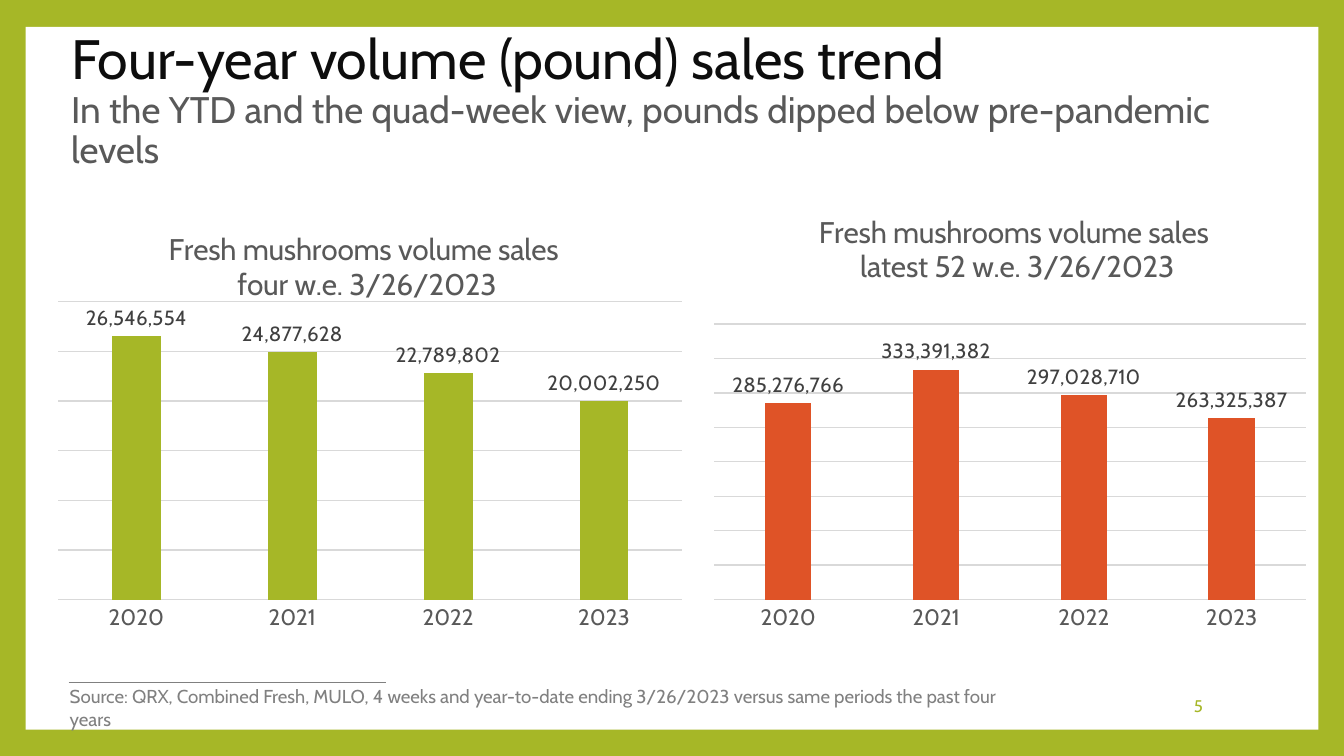
from lxml.etree import SubElement
from pptx import Presentation
from pptx.chart.data import CategoryChartData
from pptx.dml.color import RGBColor
from pptx.enum.chart import XL_CHART_TYPE, XL_LABEL_POSITION, XL_TICK_MARK
from pptx.enum.shapes import MSO_CONNECTOR, MSO_SHAPE
from pptx.enum.text import MSO_ANCHOR, PP_ALIGN
from pptx.oxml import parse_xml
from pptx.oxml.ns import nsdecls, qn
from pptx.util import Inches, Pt

GREEN = RGBColor(0xA6, 0xB7, 0x27)
ORANGE = RGBColor(0xDF, 0x53, 0x27)
WHITE = RGBColor(0xFF, 0xFF, 0xFF)
BLACK = RGBColor(0, 0, 0)
INK = RGBColor(0x0D, 0x0D, 0x0D)
LABEL = RGBColor(0x40, 0x40, 0x40)
TEXT = RGBColor(0x59, 0x59, 0x59)
GRAY = RGBColor(0x80, 0x80, 0x80)
GRID = RGBColor(0xD9, 0xD9, 0xD9)
FONT = "Cabin"
YEARS = ["2020", "2021", "2022", "2023"]


def style_font(font, size, color):
    values = {"name": FONT, "size": Pt(size), "bold": False}
    for name, value in values.items():
        setattr(font, name, value)
    font.color.rgb = color


def style_line(line, color, width):
    line.color.rgb = color
    line.width = Pt(width)


def add_text(slide, box, lines, anchor=MSO_ANCHOR.TOP, align=PP_ALIGN.LEFT, spacing=1.0):
    """Add one paragraph of (text, size, color) lines parted by line breaks."""
    tf = slide.shapes.add_textbox(*map(Inches, box)).text_frame
    tf.word_wrap = True
    tf.vertical_anchor = anchor
    p = tf.paragraphs[0]
    p.alignment = align
    p.line_spacing = spacing
    for i, (text, size, color) in enumerate(lines):
        if i:
            p.add_line_break()
        r = p.add_run()
        r.text = text
        style_font(r.font, size, color)


def add_panel(slide, box):
    slide.background.fill.solid()
    slide.background.fill.fore_color.rgb = GREEN
    sp = slide.shapes.add_shape(MSO_SHAPE.RECTANGLE, *map(Inches, box))
    sp.shadow.inherit = False
    sp.fill.solid()
    sp.fill.fore_color.rgb = WHITE
    sp.line.fill.background()


def add_heading(slide, box):
    add_text(slide, box, [
        ("Four-year volume (pound) sales trend", 29.7, INK),
        ("In the YTD and the quad-week view, pounds dipped below pre-pandemic levels",
         19.8, TEXT),
    ], anchor=MSO_ANCHOR.MIDDLE, spacing=0.9)


def add_footer(slide, box):
    left, top, width, height = box
    rule = slide.shapes.add_connector(
        MSO_CONNECTOR.STRAIGHT, Inches(left + 0.09), Inches(top + 0.03),
        Inches(left + 2.45), Inches(top + 0.03))
    style_line(rule.line, GRAY, 0.79)
    SubElement(rule._element.spPr, qn("a:effectLst"))
    add_text(slide, (left, top, 7.22, height), [
        ("Source: QRX, Combined Fresh, MULO, 4 weeks and year-to-date ending 3/26/2023 "
         "versus same periods the past four years", 10, GRAY)])
    add_text(slide, (left + width - 1.4, top + 0.05, 1.4, 0.3), [("5", 9, GREEN)],
             anchor=MSO_ANCHOR.MIDDLE, align=PP_ALIGN.RIGHT)


def make_layout(target="", **fractions):
    """Return a manual chart layout from fractions of the chart's size."""
    inner = f'<c:layoutTarget val="{target}"/>' if target else ""
    inner += '<c:xMode val="edge"/><c:yMode val="edge"/>'
    inner += "".join(f'<c:{k} val="{v}"/>' for k, v in fractions.items())
    return parse_xml(f'<c:layout {nsdecls("c")}><c:manualLayout>{inner}'
                     "</c:manualLayout></c:layout>")


def remove_layout(parent):
    for layout in parent.findall(qn("c:layout")):
        parent.remove(layout)


def add_volume_chart(slide, box, title, title_at, plot_y, plot_h, values, color, axis_max, step):
    data = CategoryChartData(number_format="#,##0")
    data.categories = YEARS
    data.add_series("Series 1", values)
    chart = slide.shapes.add_chart(
        XL_CHART_TYPE.COLUMN_CLUSTERED, *map(Inches, box), data).chart
    style_font(chart.font, 10, BLACK)
    chart.has_legend = False

    chart.has_title = True
    tf = chart.chart_title.text_frame
    tf.text = title
    for p in tf.paragraphs:
        style_font(p.runs[0].font, 16, TEXT)
    title_xml = chart.element.find(".//" + qn("c:title"))
    remove_layout(title_xml)
    title_xml.find(qn("c:tx")).addnext(make_layout(x=title_at[0], y=title_at[1]))
    plot_xml = chart.element.find(".//" + qn("c:plotArea"))
    remove_layout(plot_xml)
    plot_xml.insert(0, make_layout("inner", x=0, y=plot_y, w=1, h=plot_h))

    axis = chart.category_axis
    axis.major_tick_mark = XL_TICK_MARK.NONE
    style_font(axis.tick_labels.font, 12, TEXT)
    style_line(axis.format.line, GRID, 0.75)
    axis = chart.value_axis
    scale = {"visible": False, "minimum_scale": 0, "maximum_scale": axis_max,
             "major_unit": step, "has_major_gridlines": True}
    for name, value in scale.items():
        setattr(axis, name, value)
    style_line(axis.major_gridlines.format.line, GRID, 0.75)

    plot = chart.plots[0]
    plot.vary_by_categories = False
    plot.gap_width, plot.overlap = 219, -27
    series = plot.series[0]
    series.format.fill.solid()
    series.format.fill.fore_color.rgb = color
    labels = series.data_labels
    formats = {"show_value": True, "position": XL_LABEL_POSITION.OUTSIDE_END,
               "number_format": "#,##0", "number_format_is_linked": False}
    for name, value in formats.items():
        setattr(labels, name, value)
    style_font(labels.font, 11, LABEL)


def main():
    prs = Presentation()
    prs.slide_width = Inches(10)
    prs.slide_height = prs.slide_width * 9 // 16
    slide = prs.slides.add_slide(prs.slide_layouts[6])
    add_panel(slide, (0.19, 0.2, 9.62, 5.23))
    add_heading(slide, (0.43, 0.36, 9.29, 0.79))
    add_footer(slide, (0.42, 5.05, 8.63, 0.27))
    add_volume_chart(
        slide, (0.43, 1.55, 4.65, 3.31),
        "Fresh mushrooms volume sales \nfour w.e. 3/26/2023", (0.17, 0.04), 0.21, 0.67,
        (26546554, 24877628, 22789802, 20002250), GREEN, 30_000_000, 5_000_000)
    add_volume_chart(
        slide, (5.31, 1.55, 4.41, 3.31),
        "Fresh mushrooms volume sales \nlatest 52 w.e. 3/26/2023", (0.17, 0), 0.26, 0.62,
        (285276766, 333391382, 297028710, 263325387), ORANGE, 400_000_000, 50_000_000)
    prs.save("out.pptx")


if __name__ == "__main__":
    main()
